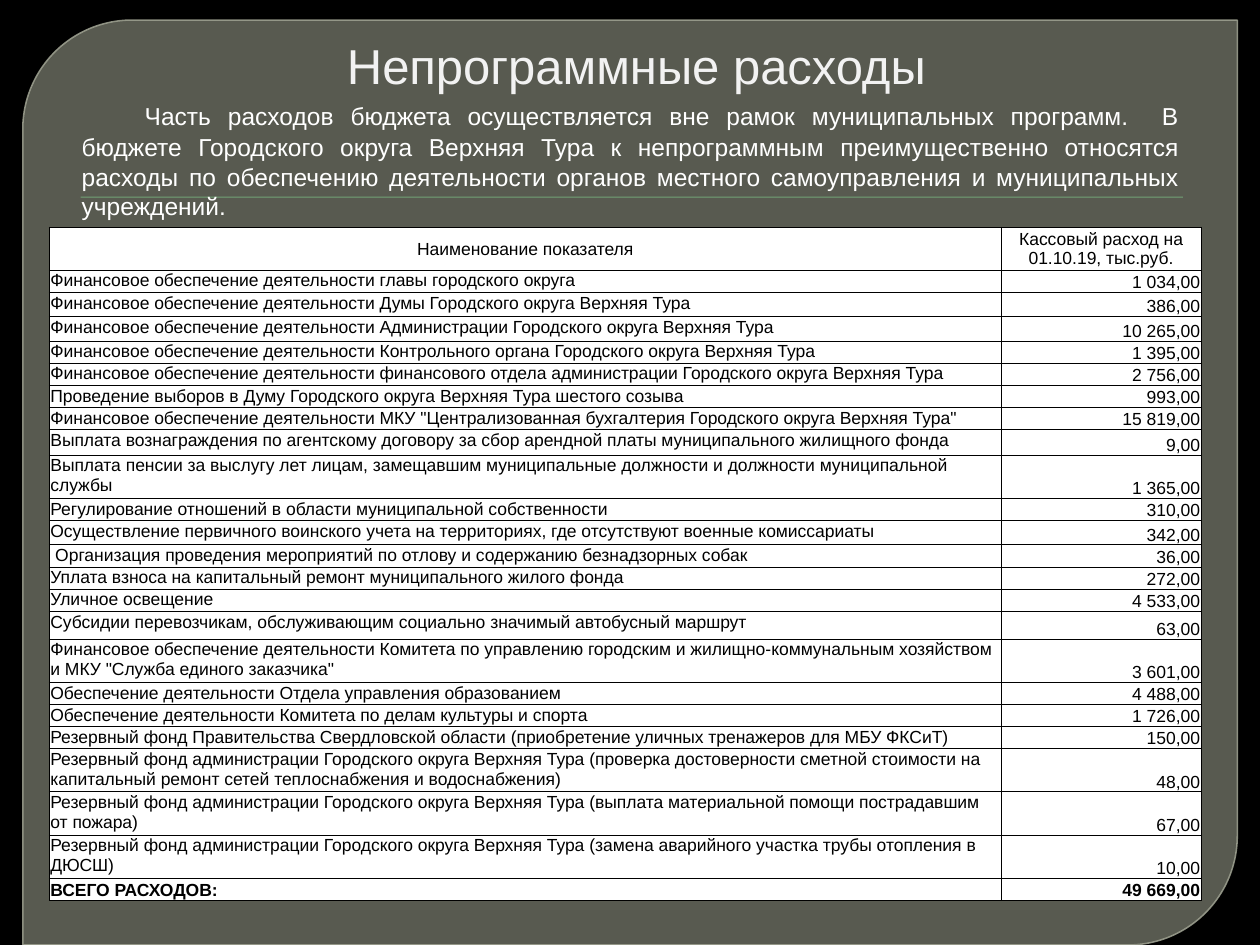
"""Build the slide on budget spending outside municipal programmes."""
from lxml.etree import SubElement
from pptx import Presentation
from pptx.dml.color import RGBColor
from pptx.enum.shapes import MSO_SHAPE as Shape
from pptx.enum.text import MSO_ANCHOR as Anchor, MSO_AUTO_SIZE as AutoSize, PP_ALIGN as Align
from pptx.oxml.ns import qn
from pptx.util import Pt

COLOURS = {
    "background": "000000",
    "panel": "888B7B",
    "border": "9DA090",
    "rule": "72A376",
    "title": "F2F2F2",
    "light": "FFFFFF",
    "dark": "000000",
}
ONE_LINE, TWO_LINES = 12.3, 24.5
INTRO = (
    "Часть расходов бюджета осуществляется вне рамок муниципальных программ.  В бюджете "
    "Городского округа Верхняя Тура к непрограммным преимущественно относятся расходы по "
    "обеспечению деятельности органов местного самоуправления и муниципальных учреждений."
)
HEADER = ("Наименование показателя", "Кассовый расход на 01.10.19, тыс.руб.")
EXPENSES = [
    ("Финансовое обеспечение деятельности главы городского округа", "1 034,00", ONE_LINE),
    ("Финансовое обеспечение деятельности Думы Городского округа Верхняя Тура", "386,00", 13.7),
    ("Финансовое обеспечение деятельности Администрации Городского округа Верхняя Тура",
     "10 265,00", 14.2),
    ("Финансовое обеспечение деятельности Контрольного органа Городского округа Верхняя Тура",
     "1 395,00", ONE_LINE),
    ("Финансовое обеспечение деятельности финансового отдела администрации Городского округа "
     "Верхняя Тура", "2 756,00", ONE_LINE),
    ("Проведение выборов в Думу Городского округа Верхняя Тура шестого созыва",
     "993,00", ONE_LINE),
    ("Финансовое обеспечение деятельности МКУ \"Централизованная бухгалтерия Городского округа "
     "Верхняя Тура\"", "15 819,00", ONE_LINE),
    ("Выплата вознаграждения по агентскому договору за сбор арендной платы муниципального "
     "жилищного фонда", "9,00", 14.6),
    ("Выплата пенсии за выслугу лет лицам, замещавшим муниципальные должности и должности "
     "муниципальной службы", "1 365,00", TWO_LINES),
    ("Регулирование отношений в области муниципальной собственности", "310,00", ONE_LINE),
    ("Осуществление первичного воинского учета на территориях, где отсутствуют военные "
     "комиссариаты", "342,00", 14),
    (" Организация проведения мероприятий по отлову и содержанию безнадзорных собак",
     "36,00", ONE_LINE),
    ("Уплата взноса на капитальный ремонт муниципального жилого фонда", "272,00", ONE_LINE),
    ("Уличное освещение", "4 533,00", ONE_LINE),
    ("Субсидии перевозчикам, обслуживающим социально значимый автобусный маршрут",
     "63,00", 16),
    ("Финансовое обеспечение деятельности Комитета по управлению городским и "
     "жилищно-коммунальным хозяйством  и МКУ \"Служба единого заказчика\"",
     "3 601,00", TWO_LINES),
    ("Обеспечение деятельности Отдела управления образованием", "4 488,00", ONE_LINE),
    ("Обеспечение деятельности Комитета по делам культуры и спорта", "1 726,00", ONE_LINE),
    ("Резервный фонд Правительства Свердловской области (приобретение уличных тренажеров "
     "для МБУ ФКСиТ)", "150,00", ONE_LINE),
    ("Резервный фонд администрации Городского округа Верхняя Тура (проверка достоверности "
     "сметной стоимости на капитальный ремонт сетей теплоснабжения и водоснабжения)",
     "48,00", TWO_LINES),
    ("Резервный фонд администрации Городского округа Верхняя Тура (выплата материальной "
     "помощи пострадавшим от пожара)", "67,00", TWO_LINES),
    ("Резервный фонд администрации Городского округа Верхняя Тура (замена аварийного участка "
     "трубы отопления в ДЮСШ)", "10,00", TWO_LINES),
]
TOTAL = ("ВСЕГО РАСХОДОВ:", "49 669,00")


def paint(fill, colour):
    """Give a fill one solid colour."""
    fill.solid()
    fill.fore_color.rgb = RGBColor.from_string(COLOURS[colour])


def write(para, text, *, size, colour, font="Arial", bold=False, align=Align.LEFT):
    """Add a formatted span of text to a paragraph."""
    para.alignment = align
    span = para.add_run()
    span.text = text
    span.font.name = font
    span.font.size = Pt(size)
    span.font.bold = bold
    span.font.color.rgb = RGBColor.from_string(COLOURS[colour])


def add_block(page, kind, colour, left, top, width, height):
    """Add a filled shape without outline or shadow."""
    block = page.shapes.add_shape(kind, Pt(left), Pt(top), Pt(width), Pt(height))
    block.shadow.inherit = False
    paint(block.fill, colour)
    block.line.fill.background()
    return block


def add_panel(page):
    """Add the translucent panel with two rounded corners."""
    panel = add_block(page, Shape.ROUND_2_DIAG_RECTANGLE, "panel", 13, 11.5, 694, 528.5)
    panel.adjustments[0] = 0.118
    panel.adjustments[1] = 0
    paint(panel.line.fill, "border")
    panel.line.width = Pt(0.87)
    for part, share in ((panel.fill, 65), (panel.line.fill, 88)):
        colour = panel.element.spPr.find(
            qn("a:solidFill") if part is panel.fill else f"{qn('a:ln')}/{qn('a:solidFill')}")[0]
        SubElement(colour, qn("a:alpha"), val=str(share * 1000))


def set_title(page, text):
    """Place and format the title placeholder in front of the panel."""
    title = page.shapes.title
    title.left, title.top, title.width, title.height = Pt(39.6), Pt(11.5), Pt(648), Pt(46)
    title.element.getparent().append(title.element)
    frame = title.text_frame
    frame.auto_size = AutoSize.NONE
    frame.vertical_anchor = Anchor.BOTTOM
    write(frame.paragraphs[0], text, size=28, colour="title", align=Align.CENTER)


def add_intro(page):
    """Add the justified introduction with its tabbed first line."""
    box = page.shapes.add_textbox(Pt(39.6), Pt(50.4), Pt(641.5), Pt(80))
    box.text_frame.word_wrap = True
    para = box.text_frame.paragraphs[0]
    write(para, "\t", size=18, colour="light", font="Roboto Slab", align=Align.JUSTIFY)
    write(para, INTRO, size=14, colour="light", align=Align.JUSTIFY)


def add_borders(cell):
    """Draw thin dark lines on all sides of a cell."""
    properties = cell._tc.get_or_add_tcPr()
    for place, side in enumerate(("a:lnL", "a:lnR", "a:lnT", "a:lnB")):
        line = properties.makeelement(qn(side), {"w": str(Pt(0.5))})
        properties.insert(place, line)
        SubElement(SubElement(line, qn("a:solidFill")), qn("a:srgbClr"), val=COLOURS["dark"])


def fill_cell(cell, text, *, anchor, align, bold=False):
    """Write and format one table cell."""
    cell.margin_left = cell.margin_right = cell.margin_top = Pt(0.6)
    cell.margin_bottom = Pt(0)
    cell.vertical_anchor = anchor
    paint(cell.fill, "light")
    add_borders(cell)
    write(cell.text_frame.paragraphs[0], text, size=10, colour="dark", bold=bold, align=align)


def add_expenses(page):
    """Add the table of expenses with its header and total."""
    rows = [(*HEADER, TWO_LINES), *EXPENSES, (*TOTAL, ONE_LINE)]
    height = sum(row[2] for row in rows)
    table = page.shapes.add_table(
        len(rows), 2, Pt(28.2), Pt(129.7), Pt(658.1), Pt(height)).table
    for column, width in zip(table.columns, (543.8, 114.3)):
        column.width = Pt(width)
    for number, (name, amount, row_height) in enumerate(rows):
        table.rows[number].height = Pt(row_height)
        header, total = number == 0, number == len(rows) - 1
        anchors = (Anchor.BOTTOM if total else Anchor.TOP, Anchor.BOTTOM)
        aligns = (Align.LEFT, Align.RIGHT)
        if header:
            anchors, aligns = (Anchor.MIDDLE,) * 2, (Align.CENTER,) * 2
        for column, text in enumerate((name, amount)):
            fill_cell(table.cell(number, column), text,
                      anchor=anchors[column], align=aligns[column], bold=total)


def main():
    """Build and save the deck."""
    deck = Presentation()
    deck.slide_width, deck.slide_height = Pt(720), Pt(540)
    page = deck.slides.add_slide(deck.slide_layouts[5])
    paint(page.background.fill, "background")
    add_panel(page)
    add_block(page, Shape.RECTANGLE, "rule", 46, 112.3, 630, 0.7)
    set_title(page, "Непрограммные расходы")
    add_intro(page)
    add_expenses(page)
    deck.save("out.pptx")


if __name__ == "__main__":
    main()
